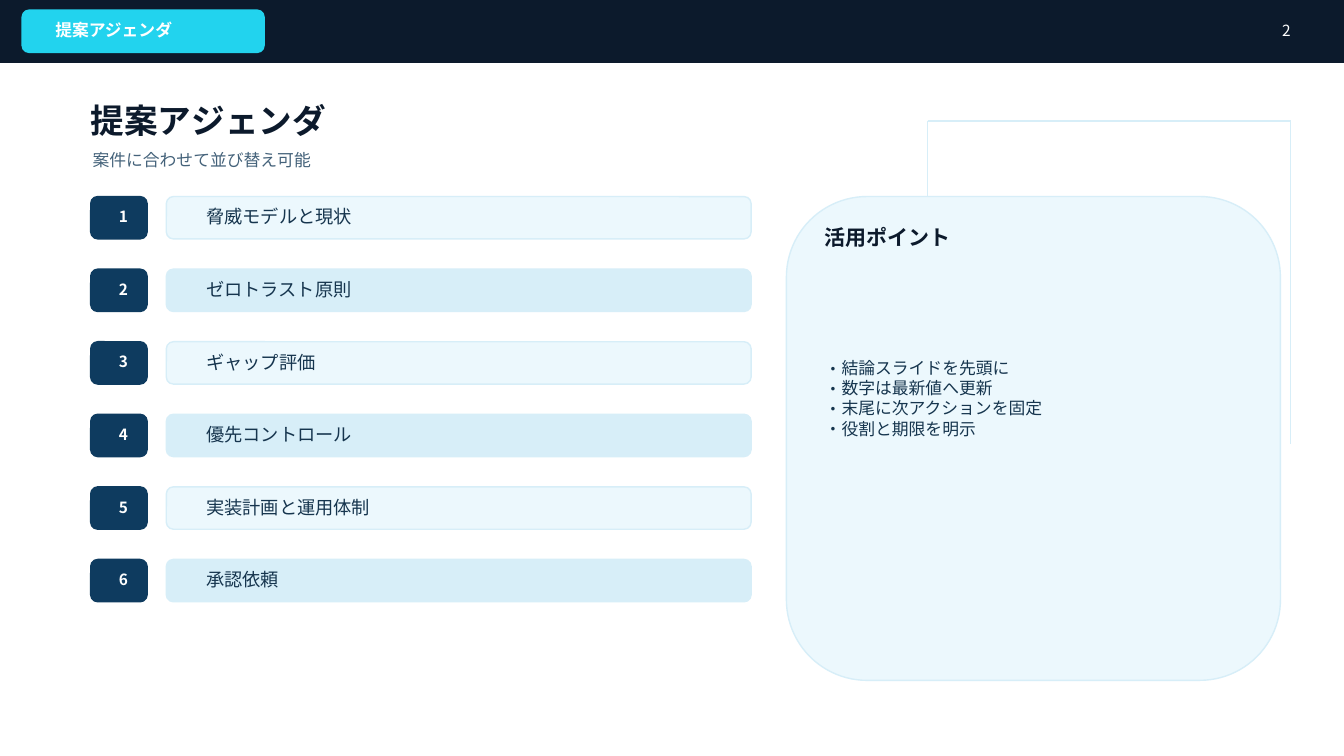
"""Build the proposal agenda slide."""
from lxml.etree import SubElement
from pptx import Presentation
from pptx.dml.color import RGBColor
from pptx.enum.lang import MSO_LANGUAGE_ID
from pptx.enum.shapes import MSO_CONNECTOR, MSO_SHAPE
from pptx.enum.text import MSO_ANCHOR, MSO_AUTO_SIZE, PP_ALIGN
from pptx.oxml.ns import qn
from pptx.util import Inches, Pt

COLORS = {"dark": "0C1A2C", "cyan": "22D3EE", "navy": "0E3B5F", "pale": "ECF8FD",
          "sky": "D7EEF8", "ink": "16354E", "slate": "44627A", "white": "FFFFFF"}
FONT = "Noto Sans CJK JP"


def add_box(kind, left, top, width, height, fill, edge):
    box = slide.shapes.add_shape(kind, Inches(left), Inches(top), Inches(width), Inches(height))
    box.shadow.inherit = False
    box.fill.solid()
    box.fill.fore_color.rgb = RGBColor.from_string(COLORS[fill])
    box.line.color.rgb = RGBColor.from_string(COLORS[edge])
    box.line.width = Pt(1)


def put_text(text, place, size, color, bold=False, align=PP_ALIGN.LEFT, font=FONT, holder=None):
    left, top, width, height = [Inches(value) for value in place]
    box = holder or slide.shapes.add_textbox(left, top, width, height)
    box.left, box.top, box.width, box.height = left, top, width, height
    frame = box.text_frame
    frame.text = text
    frame.word_wrap = True
    frame.auto_size = MSO_AUTO_SIZE.NONE
    frame.vertical_anchor = MSO_ANCHOR.MIDDLE
    for para in frame.paragraphs:
        para.alignment = align
        para.space_before = Pt(0)
        for run in para.runs:
            run.font.size = Pt(size)
            run.font.bold = bold
            run.font.name = font
            run.font.language_id = MSO_LANGUAGE_ID.JAPANESE
            run.font.color.rgb = RGBColor.from_string(COLORS[color])
            SubElement(run.font._element, qn("a:ea"), typeface=font)
    return frame


deck = Presentation()
deck.slide_width, deck.slide_height = Inches(13.33), Inches(7.5)
slide = deck.slides.add_slide(deck.slide_layouts[1])
title, body = slide.placeholders

for start, end in [((9.2, 1.2), (12.8, 1.2)), ((9.2, 1.2), (9.2, 4.4)), ((12.8, 1.2), (12.8, 4.4))]:
    line = slide.shapes.add_connector(MSO_CONNECTOR.STRAIGHT, *map(Inches, start + end))
    line.line.color.rgb = RGBColor.from_string(COLORS["sky"])
    line.line.width = Pt(1)
    SubElement(line._element.spPr, qn("a:effectLst"))

add_box(MSO_SHAPE.RECTANGLE, 0, 0, 13.33, 0.62, "dark", "dark")
add_box(MSO_SHAPE.ROUNDED_RECTANGLE, 0.22, 0.1, 2.4, 0.42, "cyan", "cyan")
put_text("提案アジェンダ", (0.45, 0.18, 8.8, 0.24), 12, "white", bold=True)
put_text("2", (12.15, 0.18, 0.75, 0.24), 11, "white", align=PP_ALIGN.RIGHT)
put_text("提案アジェンダ", (0.8, 0.95, 11.4, 0.48), 24, "dark", bold=True,
         font="DejaVu Sans Mono", holder=title)
put_text("案件に合わせて並び替え可能", (0.82, 1.44, 11.2, 0.3), 12, "slate")

topics = ["脅威モデルと現状", "ゼロトラスト原則", "ギャップ評価",
          "優先コントロール", "実装計画と運用体制", "承認依頼"]
for index, topic in enumerate(topics):
    top = 1.95 + 0.72 * index
    add_box(MSO_SHAPE.ROUNDED_RECTANGLE, 0.9, top, 0.56, 0.42, "navy", "navy")
    put_text(str(index + 1), (1.08, top + 0.1, 0.2, 0.2), 11, "white", bold=True,
             align=PP_ALIGN.CENTER)
    add_box(MSO_SHAPE.ROUNDED_RECTANGLE, 1.65, top, 5.8, 0.42,
            "sky" if index % 2 else "pale", "sky")
    put_text(topic, (1.95, top + 0.1, 5.2, 0.2), 13, "ink")

add_box(MSO_SHAPE.ROUNDED_RECTANGLE, 7.8, 1.95, 4.9, 4.8, "pale", "sky")
put_text("活用ポイント", (8.08, 2.2, 4.1, 0.3), 15, "dark", bold=True)
points = ["結論スライドを先頭に", "数字は最新値へ更新", "末尾に次アクションを固定", "役割と期限を明示"]
frame = put_text("\n".join(points), (8.08, 2.7, 4.2, 2.5), 12, "ink", holder=body)
for para in frame.paragraphs:
    props = para._p.get_or_add_pPr()
    props.set("marL", str(Pt(12)))
    props.set("indent", str(-Pt(12)))
    SubElement(props, qn("a:buFont"), typeface=FONT)
    SubElement(props, qn("a:buChar"), char="・")
slide.shapes.element.append(body.element)

deck.save("out.pptx")
